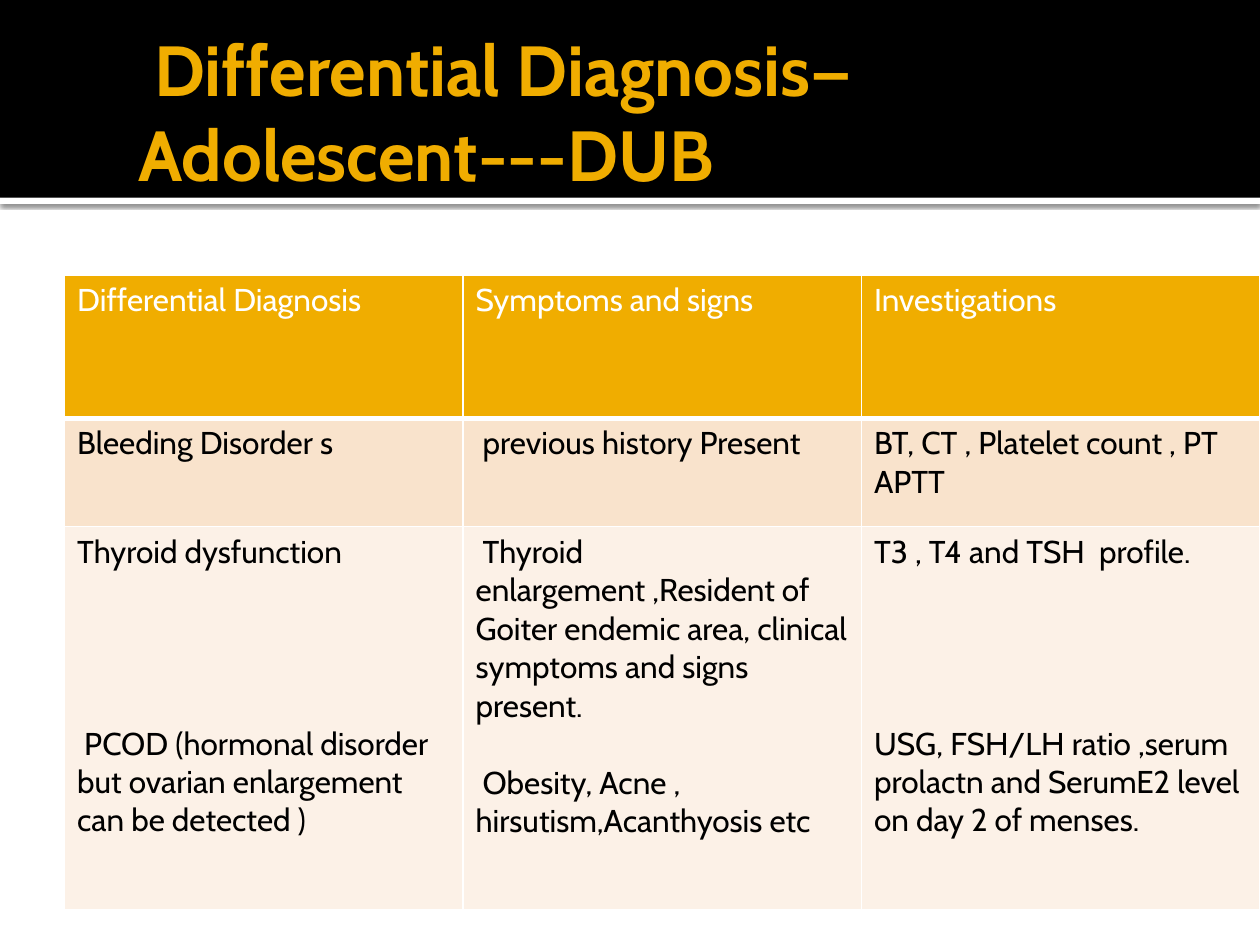
"""Build a slide with a table of differential diagnoses for adolescent DUB."""
from lxml import etree
from pptx import Presentation
from pptx.dml.color import RGBColor
from pptx.enum.shapes import MSO_SHAPE
from pptx.enum.text import MSO_ANCHOR
from pptx.oxml import parse_xml
from pptx.oxml.ns import nsdecls, qn
from pptx.util import Pt

RECT = MSO_SHAPE.RECTANGLE
MIDDLE = MSO_ANCHOR.MIDDLE
BLACK = RGBColor(0x00, 0x00, 0x00)
WHITE = RGBColor(0xFF, 0xFF, 0xFF)
GOLD = RGBColor(0xF0, 0xAD, 0x00)
PEACH = RGBColor(0xF9, 0xE3, 0xCC)
CREAM = RGBColor(0xFC, 0xF1, 0xE7)
FONT = "Cabin"

TITLE = " Differential Diagnosis—Adolescent---DUB"
ROWS = [
    (["Differential Diagnosis"], ["Symptoms and signs"], ["Investigations"]),
    (["Bleeding Disorder s"], [" previous history Present"],
     ["BT, CT , Platelet count , PT APTT"]),
    (["Thyroid dysfunction",
      " PCOD (hormonal disorder but ovarian enlargement can be detected )"],
     [" Thyroid enlargement ,Resident of  Goiter endemic area, "
      "clinical symptoms and signs present.",
      " Obesity, Acne , hirsutism,Acanthyosis etc"],
     ["T3 , T4 and TSH  profile.",
      "USG, FSH/LH ratio ,serum prolactn and SerumE2 level on day 2 of menses."]),
]
LOOKS = [(82, GOLD, WHITE, 3), (62, PEACH, BLACK, 1), (219, CREAM, BLACK, 1)]
GAPS = [87.5, 21.9, 87.5]
WIDE, HIGH = 720, 540
BAND, STRIP = 113, 3.6
LEFT, TOP = 36.9, 157


def box(slide, top, high, color):
    shape = slide.shapes.add_shape(RECT, 0, Pt(top), Pt(WIDE), Pt(high))
    shape.shadow.inherit = False
    shape.fill.solid()
    shape.fill.fore_color.rgb = color
    shape.line.fill.background()
    return shape


def shade(shape):
    effect = shape._element.spPr.find(qn("a:effectLst"))
    cast = etree.SubElement(effect, qn("a:outerShdw"), blurRad=str(Pt(2.5)),
                            dist=str(Pt(0.8)), dir="5400000", rotWithShape="0")
    tint = etree.SubElement(cast, qn("a:srgbClr"), val=str(BLACK))
    etree.SubElement(tint, qn("a:alpha"), val="60000")


def write(para, text, size, color, bold=False):
    run = para.add_run()
    run.text = text
    look = {"name": FONT, "size": Pt(size), "bold": bold}
    for key, value in look.items():
        setattr(run.font, key, value)
    run.font.color.rgb = color


def edge(cell, base):
    props = cell._tc.get_or_add_tcPr()
    for side, width in {"L": 1, "R": 1, "T": 1, "B": base}.items():
        props.append(parse_xml(
            f'<a:ln{side} {nsdecls("a")} w="{Pt(width)}"><a:solidFill>'
            f'<a:srgbClr val="{WHITE}"/></a:solidFill></a:ln{side}>'))


def head(slide):
    shade(box(slide, BAND, STRIP, WHITE))
    box(slide, 0, BAND, BLACK)
    frame = slide.shapes.add_textbox(Pt(72), Pt(15), Pt(612), Pt(96.5)).text_frame
    look = {"word_wrap": True, "vertical_anchor": MIDDLE, "margin_left": Pt(7.2),
            "margin_top": Pt(3.6), "margin_right": Pt(3.6), "margin_bottom": Pt(3.6)}
    for key, value in look.items():
        setattr(frame, key, value)
    write(frame.paragraphs[0], TITLE, 40.5, GOLD, True)


def grid(slide):
    count = len(ROWS[0])
    span = WIDE - LEFT
    tall = sum(look[0] for look in LOOKS)
    table = slide.shapes.add_table(len(ROWS), count, Pt(LEFT), Pt(TOP),
                                   Pt(span), Pt(tall)).table
    for col in table.columns:
        col.width = Pt(span / count)
    for r, (texts, (high, fill, ink, base)) in enumerate(zip(ROWS, LOOKS)):
        table.rows[r].height = Pt(high)
        for c, (lines, gap) in enumerate(zip(texts, GAPS)):
            cell = table.cell(r, c)
            edge(cell, base)
            cell.fill.solid()
            cell.fill.fore_color.rgb = fill
            frame = cell.text_frame
            for i, line in enumerate(lines):
                para = frame.add_paragraph() if i else frame.paragraphs[0]
                para.space_before = Pt(gap if i else 0)
                write(para, line, 18, ink)


def main():
    deck = Presentation()
    deck.slide_width, deck.slide_height = Pt(WIDE), Pt(HIGH)
    slide = deck.slides.add_slide(deck.slide_layouts[6])
    head(slide)
    grid(slide)
    deck.save("out.pptx")


if __name__ == "__main__":
    main()
